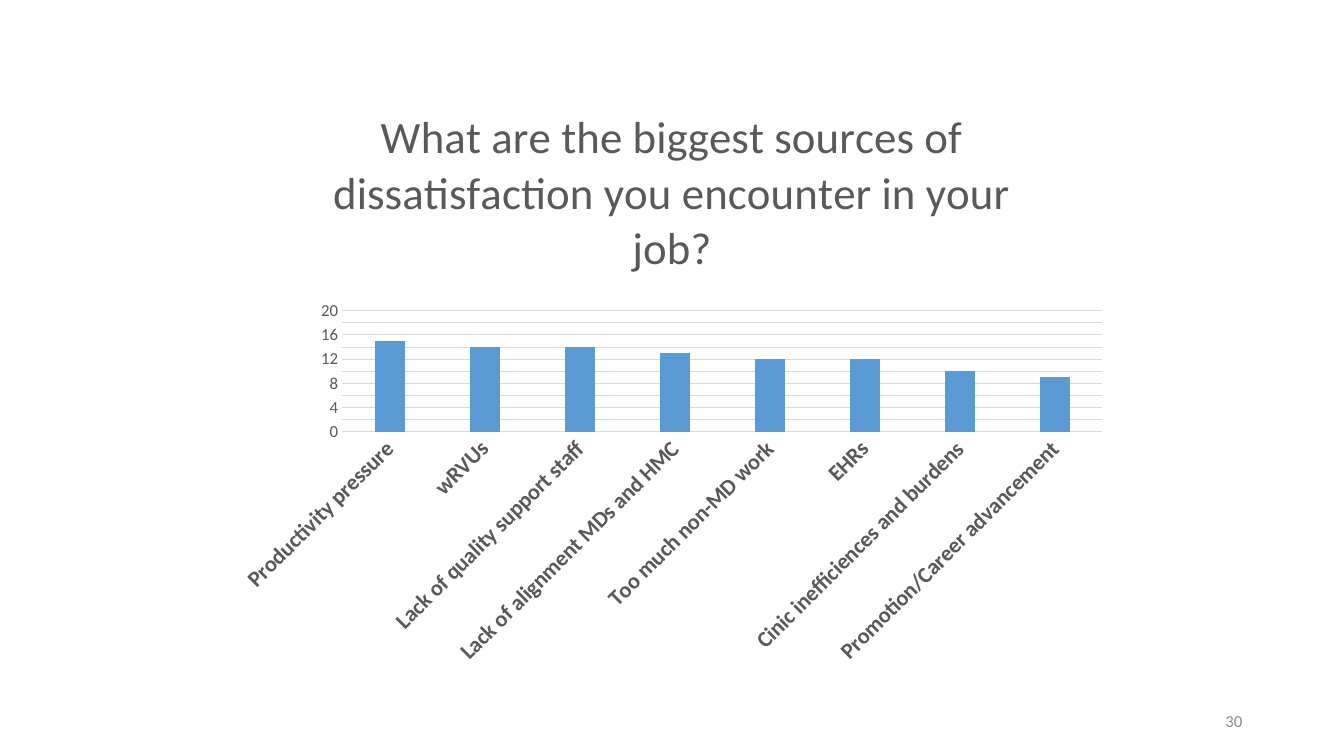
from pptx import Presentation
from pptx.chart.data import CategoryChartData
from pptx.dml.color import RGBColor
from pptx.enum.chart import XL_CHART_TYPE, XL_TICK_MARK
from pptx.enum.text import MSO_ANCHOR, PP_ALIGN
from pptx.util import Inches, Pt

COLORS = {"bar": "5B9BD5", "text": "595959", "line": "D9D9D9", "number": "8C8C8C"}
FONT = "Calibri"
TITLE = "What are the biggest sources of dissatisfaction you encounter in your job?"
ANSWERS = {
    "Productivity pressure": 15,
    "wRVUs": 14,
    "Lack of quality support staff": 14,
    "Lack of alignment MDs and HMC": 13,
    "Too much non-MD work": 12,
    "EHRs": 12,
    "Cinic inefficiences and burdens": 10,
    "Promotion/Career advancement": 9,
}


def rgb(name):
    return RGBColor.from_string(COLORS[name])


def set_font(font, size, color="text", bold=False):
    font.name = FONT
    font.size = Pt(size)
    font.bold = bold
    font.color.rgb = rgb(color)


def set_line(line):
    line.color.rgb = rgb("line")
    line.width = Pt(0.75)


def add_text(s, text, x, y, w, h, size, color="text", align=PP_ALIGN.LEFT):
    tf = s.shapes.add_textbox(Inches(x), Inches(y), Inches(w), Inches(h)).text_frame
    tf.word_wrap = True
    tf.vertical_anchor = MSO_ANCHOR.MIDDLE
    p = tf.paragraphs[0]
    p.alignment = align
    r = p.add_run()
    r.text = text
    set_font(r.font, size, color)


def style_axes(chart):
    category, value = chart.category_axis, chart.value_axis
    for axis, size, bold in ((category, 16, True), (value, 12, False)):
        axis.major_tick_mark = axis.minor_tick_mark = XL_TICK_MARK.NONE
        set_font(axis.tick_labels.font, size, bold=bold)
    set_line(category.format.line)
    # Slant the category labels upwards by 45 degrees
    category._element.txPr.bodyPr.set("rot", "-2700000")
    value.format.line.fill.background()
    value.minimum_scale, value.maximum_scale, value.major_unit = 0, 20, 2
    value.has_major_gridlines = True
    set_line(value.major_gridlines.format.line)


def add_column_chart(s, title, answers, x, y, w, h):
    data = CategoryChartData()
    data.categories = list(answers)
    data.add_series("Series 1", list(answers.values()))
    chart = s.shapes.add_chart(XL_CHART_TYPE.COLUMN_CLUSTERED, Inches(x), Inches(y),
                               Inches(w), Inches(h), data).chart
    set_font(chart.font, 10)
    chart.has_legend = False
    chart.has_title = True
    tf = chart.chart_title.text_frame
    tf.text = title
    set_font(tf.paragraphs[0].runs[0].font, 32)
    chart.chart_title.include_in_layout = False
    plot = chart.plots[0]
    plot.vary_by_categories = False
    plot.gap_width = 219
    plot.overlap = -27
    fill = plot.series[0].format.fill
    fill.solid()
    fill.fore_color.rgb = rgb("bar")
    style_axes(chart)


def main():
    prs = Presentation()
    prs.slide_width, prs.slide_height = Inches(13.33), Inches(7.5)
    s = prs.slides.add_slide(prs.slide_layouts[6])
    add_column_chart(s, TITLE, ANSWERS, 2.22, 0.79, 8.89, 5.93)
    add_text(s, "30", 9.42, 6.95, 3, 0.4, size=12, color="number", align=PP_ALIGN.RIGHT)
    prs.save("out.pptx")


if __name__ == "__main__":
    main()
